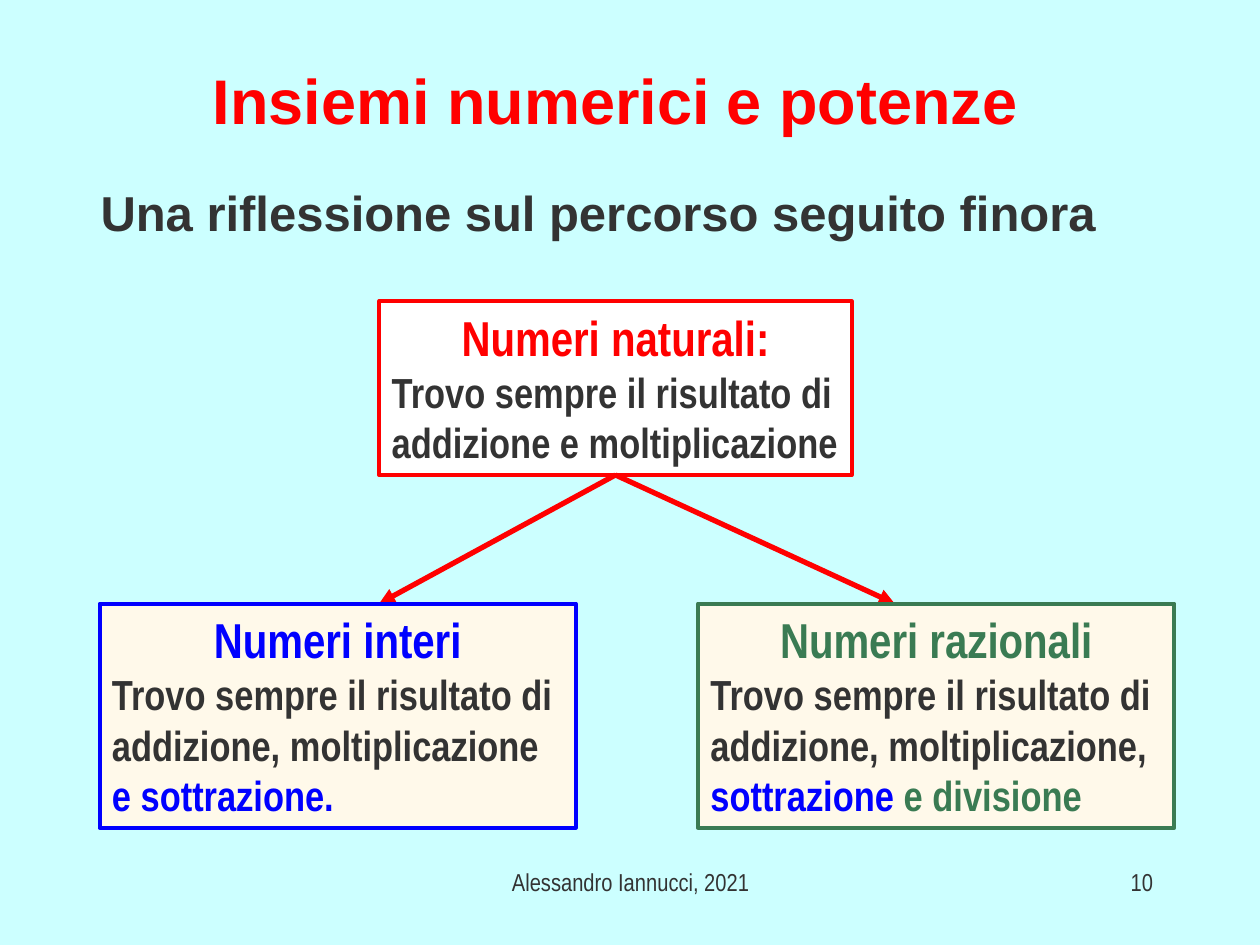
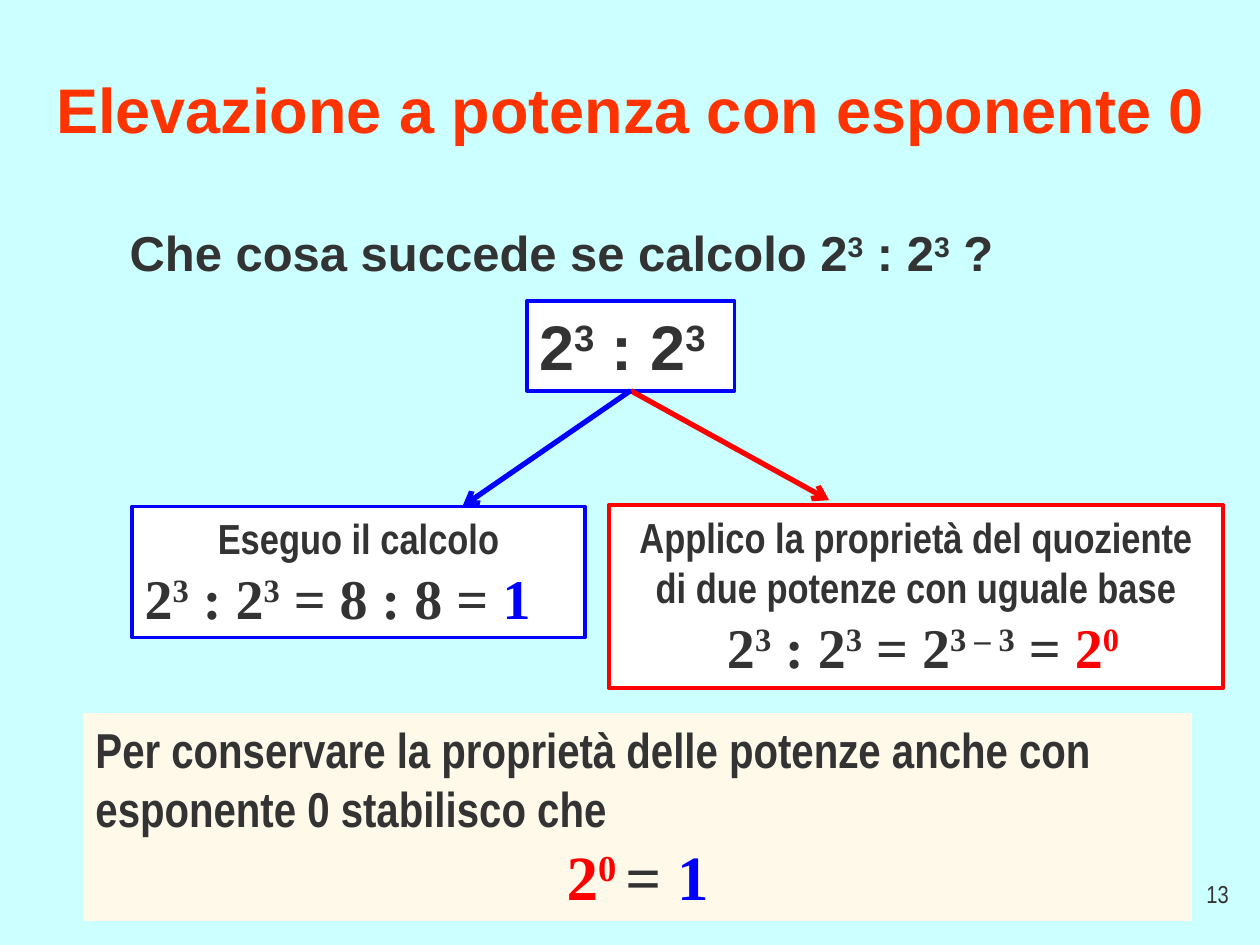
from pptx import Presentation
from pptx.dml.color import RGBColor
from pptx.enum.shapes import MSO_CONNECTOR as Line, MSO_SHAPE as Shape
from pptx.enum.text import MSO_ANCHOR as Anchor, PP_ALIGN as Align
from pptx.oxml.ns import qn
from pptx.util import Inches, Pt
from lxml.etree import SubElement

SKY, WHITE, CREAM = "CCFFFF", "FFFFFF", "FFF9EA"
INK, RED, BLUE, GREEN, FLAME = "333333", "FF0000", "0000FF", "3A7B53", "FF3300"
SANS, SLIM, SERIF = "Arial", "Arial Narrow", "Times New Roman"
MID, END = Align.CENTER, Align.RIGHT


def tint(code):
    """Turn a hex string into a colour."""
    return RGBColor.from_string(code)


def row(*runs, size=24, face=SLIM, bold=True, align=Align.LEFT):
    """Describe a paragraph made of (text, colour) runs."""
    return runs, size, face, bold, align


def put(para, text, size, face, color, bold):
    """Add text to a paragraph, raising whatever stands between carets."""
    for i, part in enumerate(text.split("^")):
        if part:
            run = para.add_run()
            run.text = part
            font = run.font
            font.size, font.name, font.bold = Pt(size), face, bold
            font.color.rgb = tint(color)
            if i % 2:
                run._r.get_or_add_rPr().set("baseline", "30000")


def fill(shape, rows, anchor=Anchor.TOP):
    """Write rows into a shape, one paragraph each."""
    frame = shape.text_frame
    frame.word_wrap, frame.vertical_anchor = True, anchor
    for i, (runs, size, face, bold, align) in enumerate(rows):
        para = frame.add_paragraph() if i else frame.paragraphs[0]
        para.alignment = align
        for text, color in runs:
            put(para, text, size, face, color, bold)


def label(slide, box, *rows, anchor=Anchor.TOP):
    """Add a plain text box."""
    fill(slide.shapes.add_textbox(*map(Inches, box)), rows, anchor)


def card(slide, box, rows, back=WHITE, edge=None):
    """Add a filled rectangle with text and an optional edge."""
    shape = slide.shapes.add_shape(Shape.RECTANGLE, *map(Inches, box))
    shape.shadow.inherit = False
    shape.fill.solid()
    shape.fill.fore_color.rgb = tint(back)
    if edge:
        shape.line.color.rgb = tint(edge)
        shape.line.width = Pt(2.25)
    else:
        shape.line.fill.background()
    fill(shape, rows, Anchor.TOP)
    return shape


def arrow(slide, root, tip, color, head):
    """Draw an arrow from the bottom of a card to a point."""
    line = slide.shapes.add_connector(Line.STRAIGHT, 0, 0, *map(Inches, tip))
    line.begin_connect(root, 2)
    line.line.color.rgb = tint(color)
    line.line.width = Pt(3)
    SubElement(line.line._get_or_add_ln(), qn("a:tailEnd"), type=head)
    SubElement(line._element.spPr, qn("a:effectLst"))


def fork(slide, left, top, root, kids, head):
    """Draw a root card with arrows to its kids, offset from left and top."""
    def move(x, y, *size):
        return (left + x, top + y, *size)

    box, edge, rows = root
    base = card(slide, move(*box), rows, edge=edge)
    for _, _, _, tip, color, _ in kids:
        arrow(slide, base, move(*tip), color, head)
    for box, back, edge, _, _, rows in kids:
        card(slide, move(*box), rows, back, edge)


def page(deck, box, title, color, number, spot):
    """Start a slide with background, title and page number."""
    slide = deck.slides.add_slide(deck.slide_layouts[6])
    slide.background.fill.solid()
    slide.background.fill.fore_color.rgb = tint(SKY)
    label(slide, box, row((title, color), size=36, face=SANS, align=MID),
          anchor=Anchor.MIDDLE)
    label(slide, (*spot, 2.08, 0.5),
          row((number, INK), size=14, bold=False, align=END))
    return slide


def sets(deck):
    """Build the slide on sets of numbers."""
    slide = page(deck, (1.56, 0.32, 6.65, 0.93), "Insiemi numerici e potenze",
                 RED, "10", (7.17, 6.83))
    label(slide, (3.42, 6.83, 3.17, 0.5),
          row(("Alessandro Iannucci, 2021", INK), size=14, bold=False, align=MID))
    label(slide, (0.7, 1.4, 8.36, 0.57),
          row(("Una riflessione sul percorso seguito finora", INK),
              size=28, face=SANS))

    def topic(name, color, *runs):
        return row((name, color), size=28, align=MID), row(*runs)

    find = "Trovo sempre il risultato di addizione"
    root = ((2.22, 0, 3.75, 1.38), RED,
            topic("Numeri naturali:", RED, (find + " e moltiplicazione", INK)))
    kids = [
        ((0, 2.4, 3.78, 1.78), CREAM, BLUE, (2.22, 2.4), RED,
         topic("Numeri interi", BLUE, (find + ", moltiplicazione ", INK),
               ("e sottrazione.", BLUE))),
        ((4.75, 2.4, 3.78, 1.78), CREAM, GREEN, (6.31, 2.4), RED,
         topic("Numeri razionali", GREEN, (find + ", moltiplicazione, ", INK),
               ("sottrazione ", BLUE), ("e divisione", GREEN))),
    ]
    fork(slide, 0.79, 2.39, root, kids, "triangle")


def zero(deck):
    """Build the slide on the exponent zero."""
    slide = page(deck, (0.22, 0.38, 9.57, 0.96),
                 "Elevazione a potenza con esponente 0", FLAME, "13", (7.77, 6.93))
    ratio = "2^3^ : 2^3^"
    label(slide, (0.93, 1.72, 8.28, 0.57),
          row((f"Che cosa succede se calcolo {ratio} ?", INK), size=28, face=SANS))
    root = ((3.13, 0, 1.65, 0.71), BLUE, [row((ratio, INK), size=36, face=SANS)])
    rule = "Applico la proprietà del quoziente di due potenze con uguale base"
    kids = [
        ((3.78, 1.62, 4.88, 1.45), WHITE, RED, (5.53, 1.58), RED,
         [row((rule, INK), align=MID),
          row((f" {ratio} = 2^3 – 3^ = ", INK), ("2^0^", RED),
              size=32, face=SERIF, align=MID)]),
        ((0, 1.63, 3.59, 1.04), WHITE, BLUE, (2.62, 1.63), BLUE,
         [row(("Eseguo il calcolo", INK), align=MID),
          row((f"{ratio} = 8 : 8 = ", INK), ("1", BLUE), size=32, face=SERIF)]),
    ]
    fork(slide, 1.05, 2.39, root, kids, "arrow")
    moral = ("Per conservare la proprietà delle potenze anche con "
             "esponente 0 stabilisco che")
    card(slide, (0.66, 5.66, 8.8, 1.65),
         [row((moral, INK), size=28),
          row(("2^0 ^", RED), ("= ", INK), ("1", BLUE),
              size=36, face=SERIF, align=MID)], CREAM)


def main():
    """Build and save the deck."""
    deck = Presentation()
    deck.slide_width, deck.slide_height = Inches(10), Inches(7.5)
    sets(deck)
    zero(deck)
    deck.save("out.pptx")


if __name__ == "__main__":
    main()
